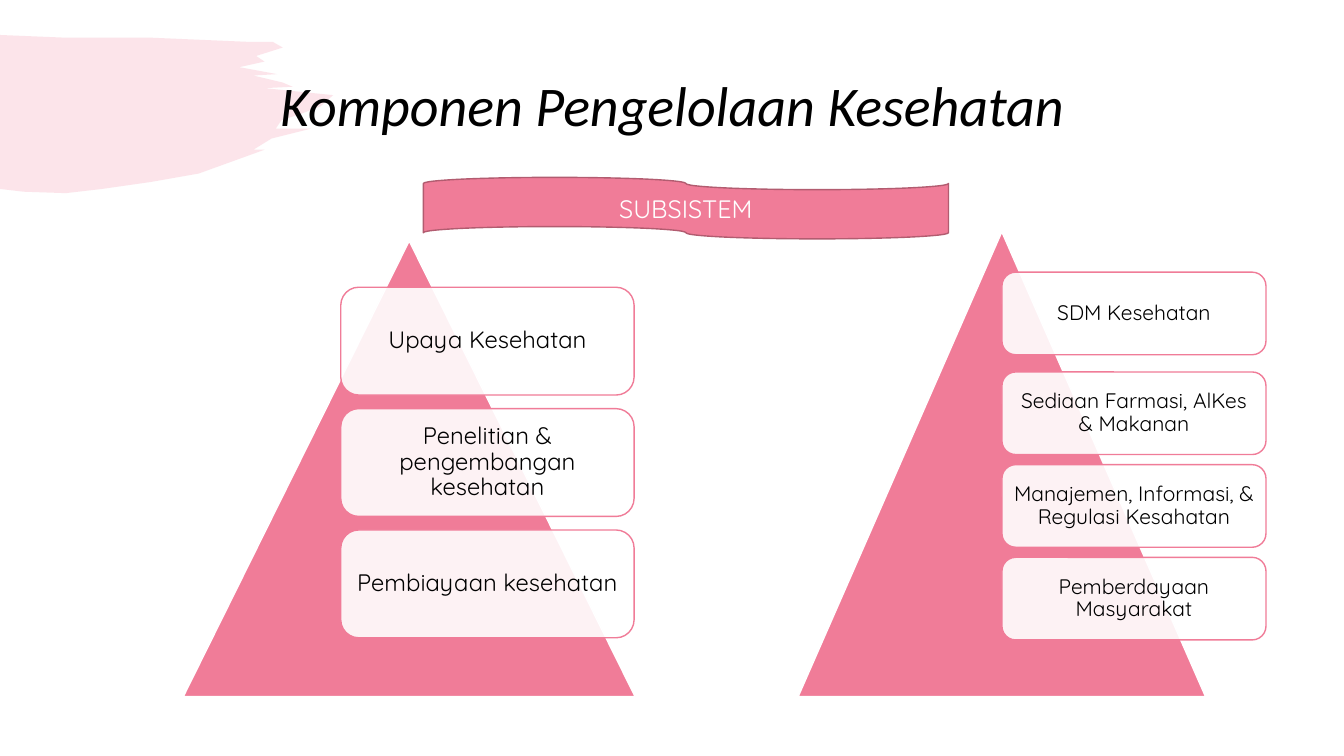
import dataclasses

import pptx
import pptx.util
from lxml import etree
from pptx.dml.color import RGBColor
from pptx.enum.shapes import MSO_SHAPE
from pptx.enum.text import MSO_ANCHOR, PP_ALIGN
from pptx.oxml.ns import qn

Pt = pptx.util.Pt


@dataclasses.dataclass(frozen=True)
class Theme:
    pink: str = "F07C98"
    dark_pink: str = "B25C70"
    white: str = "FFFFFF"
    black: str = "000000"
    title_font: str = "Calibri"
    body_font: str = "Quicksand"
    title_size: int = 40
    banner_size: int = 18
    large_card_size: int = 17
    small_card_size: int = 15


THEME = Theme()

# Brush stroke outline in points: upper edge, bristles, lower edge
BRUSH_OUTLINE = [
    (0, 25), (48, 27), (109, 27), (179, 30), (195, 30), (202, 34),
    (183, 40), (189, 44), (171, 48), (198, 53), (181, 54), (202, 59),
    (209, 62), (189, 63), (238, 68), (229, 76), (216, 81), (201, 86),
    (197, 92), (222, 92), (194, 99), (181, 107), (189, 107), (142, 124),
    (108, 130), (73, 135), (47, 138), (17, 137), (0, 135),
]


def paint(shape, fill, line=None, opacity=100):
    shape.shadow.inherit = False
    shape.fill.solid()
    shape.fill.fore_color.rgb = RGBColor.from_string(fill)
    if opacity < 100:
        color = shape.element.spPr.find(qn("a:solidFill"))[0]
        etree.SubElement(color, qn("a:alpha"), val=str(opacity * 1000))
    if line:
        shape.line.color.rgb = RGBColor.from_string(line)
        shape.line.width = Pt(1)
    else:
        shape.line.fill.background()


def write(box, text, *, size, font=THEME.body_font, color=THEME.black,
          italic=False, spacing=None, inset=None):
    frame = box.text_frame
    frame.word_wrap = True
    frame.vertical_anchor = MSO_ANCHOR.MIDDLE
    if inset is not None:
        frame.margin_left = frame.margin_right = Pt(inset)
        frame.margin_top = frame.margin_bottom = Pt(inset)
    para = frame.paragraphs[0]
    para.alignment = PP_ALIGN.CENTER
    if spacing:
        para.line_spacing = spacing
    span = para.add_run()
    span.text = text
    span.font.name = font
    span.font.size = Pt(size)
    span.font.italic = italic
    span.font.color.rgb = RGBColor.from_string(color)


def add_preset(shapes, kind, area, fill, line, opacity=100):
    shape = shapes.add_shape(kind, *map(Pt, area))
    paint(shape, fill, line, opacity)
    return shape


def add_brush(page):
    start, *rest = BRUSH_OUTLINE
    outline = page.shapes.build_freeform(*start, scale=Pt(1))
    outline.add_line_segments(rest, close=True)
    paint(outline.convert_to_shape(), THEME.pink, opacity=20)


def add_title(page, text):
    box = page.shapes.add_textbox(Pt(66), Pt(25.2), Pt(828), Pt(104.4))
    write(box, text, size=THEME.title_size, font=THEME.title_font, italic=True, spacing=0.9)


def add_banner(page, text):
    banner = add_preset(page.shapes, MSO_SHAPE.FLOWCHART_PUNCHED_TAPE,
                        (302.4, 126.7, 375.1, 43.9), THEME.pink, THEME.dark_pink)
    banner.element.spPr.find(qn("a:xfrm")).set("flipH", "1")
    write(banner, text, size=THEME.banner_size, color=THEME.white)


def add_pyramid(page, area, cards, *, left, width, height, size, inset):
    shapes = page.shapes.add_group_shape().shapes
    add_preset(shapes, MSO_SHAPE.ISOSCELES_TRIANGLE, area, THEME.pink, THEME.white)
    for top, text in cards:
        card = add_preset(shapes, MSO_SHAPE.ROUNDED_RECTANGLE, (left, top, width, height),
                          THEME.white, THEME.pink, opacity=90)
        write(card, text, size=size, spacing=0.9, inset=inset)


def main():
    deck = pptx.Presentation()
    deck.slide_width, deck.slide_height = Pt(960), Pt(540)
    page = deck.slides.add_slide(deck.slide_layouts[6])

    # Heading
    add_brush(page)
    add_title(page, "Komponen Pengelolaan Kesehatan")

    # Right pyramid: the first card stands a little apart
    lower_texts = ["Sediaan Farmasi, AlKes & Makanan",
                   "Manajemen, Informasi, & Regulasi Kesahatan",
                   "Pemberdayaan Masyarakat"]
    right_cards = [(194.4, "SDM Kesehatan")]
    right_cards += [(265.7 + 66.2 * row, text) for row, text in enumerate(lower_texts)]
    add_pyramid(page, (570.2, 165.6, 290.9, 331.9), right_cards, left=715.7, width=188.6,
                height=59, size=THEME.small_card_size, inset=4.3)

    # Left pyramid: evenly spaced cards
    left_texts = ["Upaya Kesehatan", "Penelitian & pengembangan kesehatan",
                  "Pembiayaan kesehatan"]
    left_cards = [(205.2 + 86.7 * row, text) for row, text in enumerate(left_texts)]
    add_pyramid(page, (131, 172.1, 322.6, 325.4), left_cards, left=243.4, width=209.5,
                height=77, size=THEME.large_card_size, inset=5)

    # Banner
    add_banner(page, "SUBSISTEM")
    deck.save("out.pptx")


if __name__ == "__main__":
    main()
